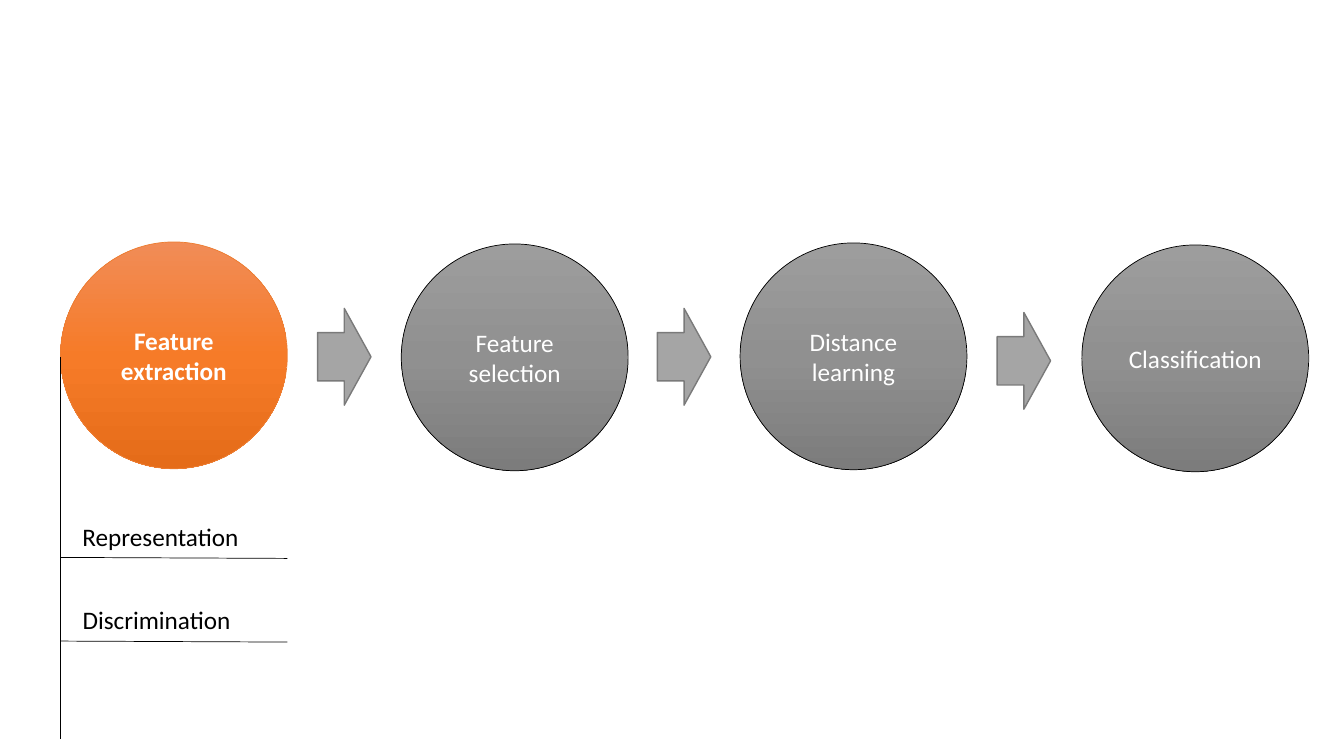
from copy import deepcopy
from dataclasses import dataclass

from lxml.etree import SubElement
from pptx import Presentation
from pptx.dml.color import RGBColor
from pptx.enum.shapes import MSO_CONNECTOR, MSO_SHAPE
from pptx.enum.text import MSO_ANCHOR, MSO_AUTO_SIZE, PP_ALIGN
from pptx.oxml.ns import qn
from pptx.util import Emu, Pt


@dataclass(frozen=True)
class Theme:
    font: str = "Calibri"
    text_size: int = 18
    thin: float = 0.5
    arrow_line: float = 1
    black: str = "000000"
    white: str = "FFFFFF"
    arrow: str = "A5A5A5"
    arrow_edge: str = "7A7A7A"
    active_edge: str = "ED7D31"
    active: tuple = ("F18C57", "F67B28", "E56C19")
    inactive: tuple = ("9D9D9D", "909090", "7C7C7C")


THEME = Theme()
PX_PER_INCH = 100
CIRCLE = 225
RAIL_X = 60
STAGES = [
    ("Feature extraction", 60, 240),
    ("Feature selection", 398, 242),
    ("Distance learning", 734, 241),
    ("Classification", 1073, 243),
]
ARROW_TOPS = [306, 306, 310]
TOPICS = [("Representation", 512, 177), ("Discrimination", 595, 169)]


def px(*values):
    return [Emu(v * 914400 // PX_PER_INCH) for v in values]


def set_all(target, values):
    for name, value in values.items():
        setattr(target, name, value)


def set_line(sp, color, width):
    sp.line.color.rgb = RGBColor.from_string(color)
    sp.line.width = Pt(width)


def set_gradient(sp, colors):
    sp.fill.gradient()
    sp.fill.gradient_angle = 270
    stop_list = sp._element.spPr.find(qn("a:gradFill")).find(qn("a:gsLst"))
    stop_list.insert(1, deepcopy(stop_list[0]))
    for i, (stop, color) in enumerate(zip(sp.fill.gradient_stops, colors)):
        stop.position = i / (len(colors) - 1)
        stop.color.rgb = RGBColor.from_string(color)


def write(tf, text, color, bold=False, align=PP_ALIGN.LEFT):
    p = tf.paragraphs[0]
    p.alignment = align
    r = p.add_run()
    r.text = text
    set_all(r.font, {"name": THEME.font, "size": Pt(THEME.text_size), "bold": bold})
    r.font.color.rgb = RGBColor.from_string(color)


def add_stage(s, text, x, y, active):
    sp = s.shapes.add_shape(MSO_SHAPE.OVAL, *px(x, y, CIRCLE, CIRCLE))
    sp.shadow.inherit = False
    set_gradient(sp, THEME.active if active else THEME.inactive)
    set_line(sp, THEME.active_edge if active else THEME.black, THEME.thin)
    set_all(sp.text_frame, {"word_wrap": True, "vertical_anchor": MSO_ANCHOR.MIDDLE})
    write(sp.text_frame, text, THEME.white, active, PP_ALIGN.CENTER)


def add_arrow(s, x, y):
    sp = s.shapes.add_shape(MSO_SHAPE.RIGHT_ARROW, *px(x, y, 53, 96))
    sp.shadow.inherit = False
    sp.fill.solid()
    sp.fill.fore_color.rgb = RGBColor.from_string(THEME.arrow)
    set_line(sp, THEME.arrow_edge, THEME.arrow_line)


def add_rule(s, x1, y1, x2, y2):
    sp = s.shapes.add_connector(MSO_CONNECTOR.STRAIGHT, *px(x1, y1, x2, y2))
    set_line(sp, THEME.black, THEME.thin)
    SubElement(sp._element.spPr, qn("a:effectLst"))


def add_topic(s, text, y, width):
    add_rule(s, RAIL_X, y + 41, RAIL_X + CIRCLE, y + 42)
    tf = s.shapes.add_textbox(*px(RAIL_X + 12, y, width, 40)).text_frame
    set_all(tf, {"word_wrap": False, "auto_size": MSO_AUTO_SIZE.SHAPE_TO_FIT_TEXT})
    write(tf, text, THEME.black)


def main():
    """Build the slide of pipeline stages with the first stage highlighted."""
    prs = Presentation()
    prs.slide_width, prs.slide_height = px(1333, 750)
    s = prs.slides.add_slide(prs.slide_layouts[6])
    for i, (text, x, y) in enumerate(STAGES):
        add_stage(s, text, x, y, i == 0)
    for i, y in enumerate(ARROW_TOPS):
        add_arrow(s, 315 + i * 337, y)
    add_rule(s, RAIL_X, 354, RAIL_X, 733)
    for topic in TOPICS:
        add_topic(s, *topic)
    prs.save("out.pptx")


if __name__ == "__main__":
    main()
